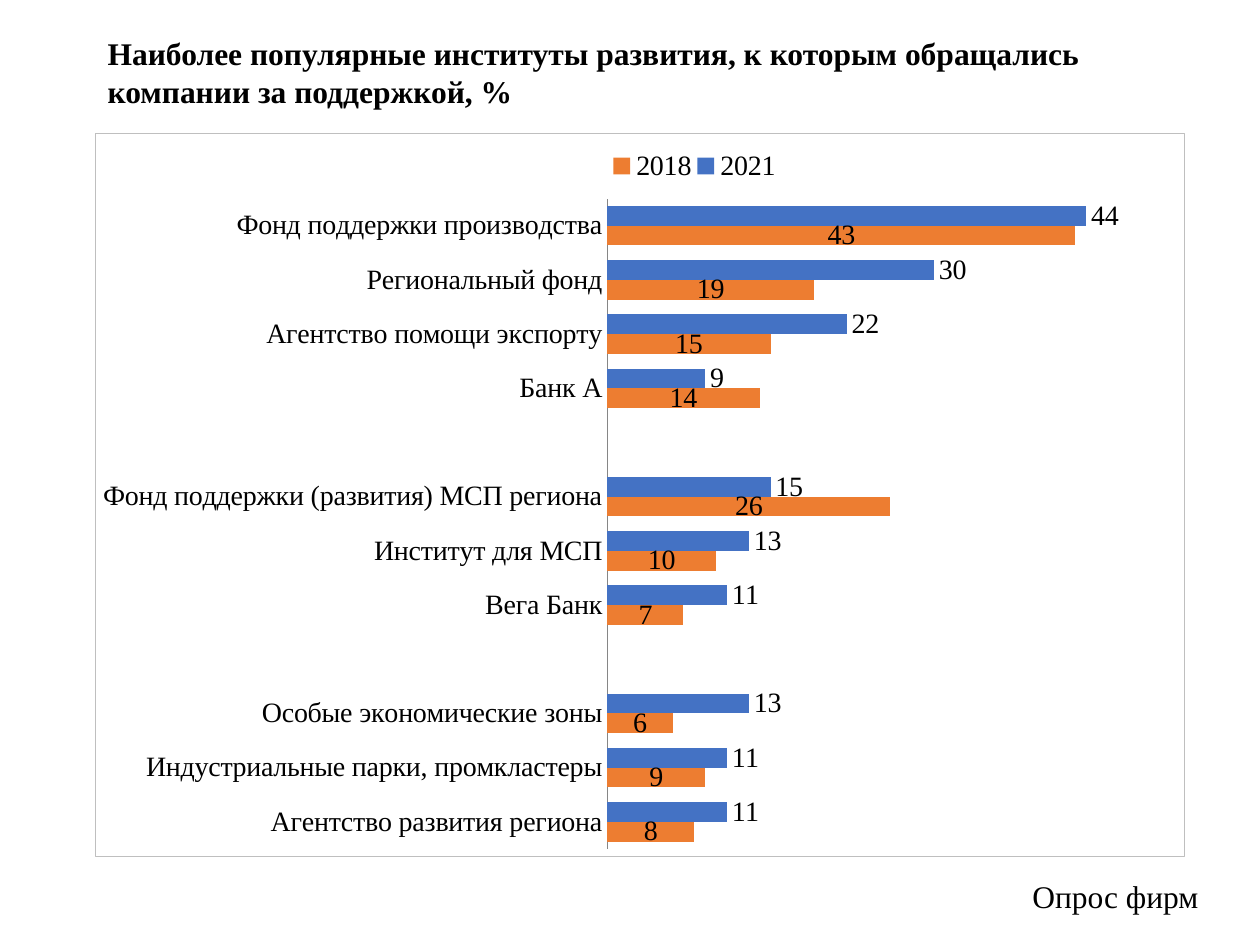
from dataclasses import dataclass

from pptx import Presentation
from pptx.chart.data import CategoryChartData as Data
from pptx.dml.color import RGBColor as Rgb
from pptx.enum.chart import (
    XL_CHART_TYPE as Kind,
    XL_LABEL_POSITION as Spot,
    XL_LEGEND_POSITION as Side,
    XL_TICK_LABEL_POSITION as Tags,
    XL_TICK_MARK as Tick,
)
from pptx.enum.text import MSO_ANCHOR as Anchor, MSO_AUTO_SIZE as Fit, PP_ALIGN as Align
from pptx.oxml import parse_xml
from pptx.oxml.ns import nsdecls, qn
from pptx.util import Emu, Pt

TITLE = "Наиболее популярные институты развития, к которым обращались компании за поддержкой, %"
SOURCE = "Опрос фирм"
YEARS = ("2021", "2018")
ROWS = [
    ("Фонд поддержки производства", 44, 43),
    ("Региональный фонд", 30, 19),
    ("Агентство помощи экспорту", 22, 15),
    ("Банк А", 9, 14),
    ("", None, None),
    ("Фонд поддержки (развития) МСП региона", 15, 26),
    ("Институт для МСП", 13, 10),
    ("Вега Банк", 11, 7),
    ("", None, None),
    ("Особые экономические зоны", 13, 6),
    ("Индустриальные парки, промкластеры", 11, 9),
    ("Агентство развития региона", 11, 8),
]
SPOTS = (Spot.OUTSIDE_END, Spot.CENTER)
HEAD = (95, 28, 1090, 89)
GRAPH = (95, 133, 1090, 724)
FOOT = (959, 871, 252, 50)
PLOT = (0.47, 0.09, 0.5, 0.9)
KEY = (0.47, 0.02, 0.16, 0.05)


@dataclass(frozen=True)
class Theme:
    font: str = "Times New Roman"
    ink: str = "000000"
    bars: tuple = ("4472C4", "ED7D31")
    axis: str = "868686"
    edge: str = "BFBFBF"
    text: int = 18
    label: int = 16


LOOK = Theme()


def px(n):
    return Emu(round(n * 914400 / 126))


def style(font, size, bold=False):
    font.name = LOOK.font
    font.size = Pt(size)
    font.bold = bold
    font.color.rgb = Rgb.from_string(LOOK.ink)


def write(shape, text, size=LOOK.text, bold=False, align=Align.LEFT):
    frame = shape.text_frame
    frame.word_wrap = True
    frame.auto_size = Fit.NONE
    frame.vertical_anchor = Anchor.TOP
    para = frame.paragraphs[0]
    para.alignment = align
    run = para.add_run()
    run.text = text
    style(run.font, size, bold)


def place(node, index, box, inner=False):
    old = node.find(qn("c:layout"))
    if old is not None:
        node.remove(old)
    target = '<c:layoutTarget val="inner"/>' if inner else ""
    modes = "".join(f'<c:{k}Mode val="edge"/>' for k in "xy")
    sizes = "".join(f'<c:{k} val="{v}"/>' for k, v in zip("xywh", box))
    node.insert(index, parse_xml(
        f'<c:layout {nsdecls("c")}><c:manualLayout>{target}{modes}{sizes}'
        "</c:manualLayout></c:layout>"))


def draw(slide):
    data = Data(number_format="0")
    names, *cols = zip(*ROWS)
    data.categories = names
    for year, vals in zip(YEARS, cols):
        data.add_series(year, vals)
    chart = slide.shapes.add_chart(Kind.BAR_CLUSTERED, *map(px, GRAPH), data).chart
    style(chart.font, LOOK.label)
    chart.has_title = False
    chart.has_legend = True
    chart.legend.position = Side.BOTTOM
    chart.legend.include_in_layout = False

    plot = chart.plots[0]
    plot.gap_width = 75
    plot.overlap = 0
    plot.vary_by_categories = False
    for row, color, spot in zip(plot.series, LOOK.bars, SPOTS):
        row.format.fill.solid()
        row.format.fill.fore_color.rgb = Rgb.from_string(color)
        row.invert_if_negative = False
        tags = row.data_labels
        tags.show_value = True
        tags.position = spot
        tags.number_format = "#,##0"
        tags.number_format_is_linked = False
        style(tags.font, LOOK.label)

    cat, val = chart.category_axis, chart.value_axis
    for axis in (cat, val):
        axis.has_major_gridlines = False
        axis.major_tick_mark = axis.minor_tick_mark = Tick.NONE
    cat.reverse_order = True
    cat.format.line.color.rgb = Rgb.from_string(LOOK.axis)
    cat.format.line.width = Pt(0.75)
    val.minimum_scale, val.maximum_scale = 0, 50
    val.tick_label_position = Tags.NONE
    val.tick_labels.number_format = "0.0"
    val.tick_labels.number_format_is_linked = False
    val.format.line.fill.background()

    body = chart._chartSpace.find(qn("c:chart"))
    place(body.find(qn("c:plotArea")), 0, PLOT, inner=True)
    place(body.find(qn("c:legend")), 1, KEY)
    body.addnext(parse_xml(
        f'<c:spPr {nsdecls("c", "a")}><a:noFill/><a:ln w="9525"><a:solidFill>'
        f'<a:srgbClr val="{LOOK.edge}"/></a:solidFill></a:ln></c:spPr>'))


def main():
    deck = Presentation()
    deck.slide_width, deck.slide_height = px(1260), px(945)
    slide = deck.slides.add_slide(deck.slide_layouts[5])
    title = slide.shapes.title
    title.left, title.top, title.width, title.height = map(px, HEAD)
    write(title, TITLE, bold=True)
    draw(slide)
    write(slide.shapes.add_textbox(*map(px, FOOT)), SOURCE, align=Align.RIGHT)
    deck.save("out.pptx")


if __name__ == "__main__":
    main()
